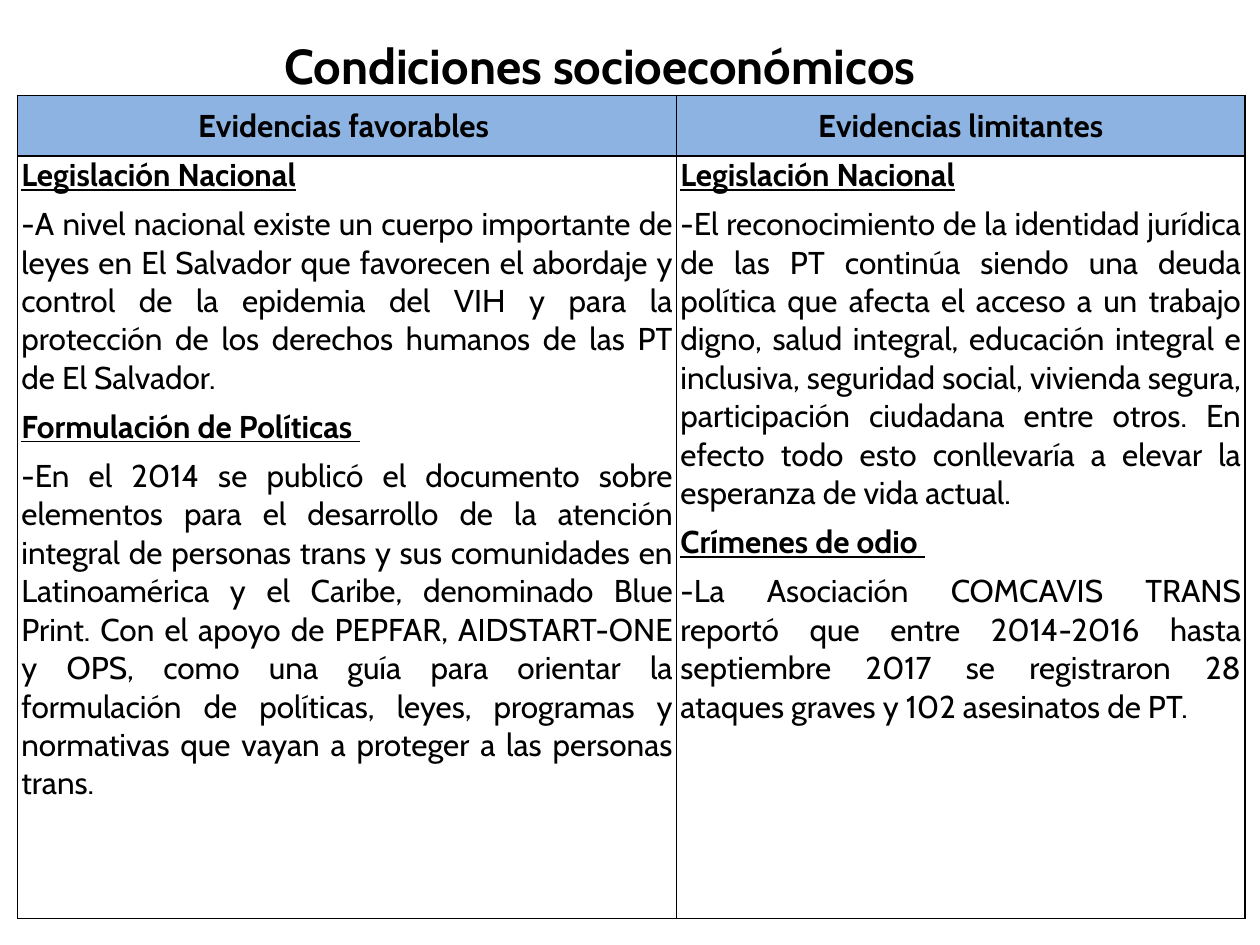
from lxml import etree
from pptx import Presentation
from pptx.dml.color import RGBColor
from pptx.enum.text import MSO_ANCHOR, PP_ALIGN
from pptx.oxml.ns import qn
from pptx.util import Inches, Pt

CENTER, LEFT, JUSTIFY = PP_ALIGN.CENTER, PP_ALIGN.LEFT, PP_ALIGN.JUSTIFY
TOP, MIDDLE = MSO_ANCHOR.TOP, MSO_ANCHOR.MIDDLE

TITLE = "Condiciones socioeconómicos "
COLUMNS = [
    {
        "heading": "Evidencias favorables ",
        "sections": [
            ("Legislación Nacional",
             "-A nivel nacional existe un cuerpo importante de leyes en El Salvador que "
             "favorecen el abordaje y control de la epidemia del VIH y para la protección "
             "de los derechos humanos de las PT de El Salvador. "),
            ("Formulación de Políticas ",
             "-En el 2014 se publicó el documento sobre elementos para el desarrollo de la "
             "atención integral de personas trans y sus comunidades en Latinoamérica y el "
             "Caribe, denominado Blue Print. Con el apoyo de PEPFAR, AIDSTART-ONE y OPS, "
             "como una guía para orientar la formulación de políticas, leyes, programas y "
             "normativas que vayan a proteger a las personas trans."),
        ],
    },
    {
        "heading": "Evidencias limitantes",
        "sections": [
            ("Legislación Nacional",
             "-El reconocimiento de la identidad jurídica de las PT continúa siendo una "
             "deuda política que afecta el acceso a un trabajo digno, salud integral, "
             "educación integral e inclusiva, seguridad social, vivienda segura, "
             "participación ciudadana entre otros. En efecto todo esto conllevaría a "
             "elevar la esperanza de vida actual. "),
            ("Crímenes de odio ",
             "-La Asociación COMCAVIS TRANS reportó que entre 2014-2016 hasta septiembre "
             "2017 se registraron 28 ataques graves y 102 asesinatos de PT."),
        ],
    },
]

THEME = {
    "font": "Cabin",
    "text": "000000",
    "header": "8DB3E2",
    "border": "000000",
    "title_size": 28,
    "table_size": 18,
    "border_width": 1,
    "paragraph_gap": 6,
}
SLIDE_SIZE = (10, 7.5)
TITLE_BOX = (0.12, 0.23, 9.37, 0.57)
TABLE_ORIGIN = (0.14, 0.76)
COLUMN_WIDTHS = (5.23, 4.51)
ROW_HEIGHTS = (0.48, 6.05)
CELL_INSET = 0.03


def write_paragraph(paragraph, text, size, bold=False, underline=False, align=LEFT, gap=0):
    paragraph.alignment = align
    paragraph.space_before = Pt(gap)
    run = paragraph.add_run()
    run.text = text
    font = run.font
    font.name = THEME["font"]
    font.size = Pt(size)
    font.bold = bold
    font.underline = underline
    font.color.rgb = RGBColor.from_string(THEME["text"])


def add_borders(cell):
    properties = cell._tc.get_or_add_tcPr()
    for index, side in enumerate(("lnL", "lnR", "lnT", "lnB")):
        line = etree.Element(qn(f"a:{side}"), w=str(Pt(THEME["border_width"])))
        fill = etree.SubElement(line, qn("a:solidFill"))
        etree.SubElement(fill, qn("a:srgbClr"), val=THEME["border"])
        properties.insert(index, line)


def format_cell(cell, anchor, fill=None):
    cell.margin_left = cell.margin_right = Inches(CELL_INSET)
    cell.margin_top = cell.margin_bottom = 0
    cell.vertical_anchor = anchor
    if fill:
        cell.fill.solid()
        cell.fill.fore_color.rgb = RGBColor.from_string(fill)
    else:
        cell.fill.background()
    add_borders(cell)


def write_sections(frame, sections):
    size, gap = THEME["table_size"], THEME["paragraph_gap"]
    for index, (heading, body) in enumerate(sections):
        paragraph = frame.add_paragraph() if index else frame.paragraphs[0]
        write_paragraph(paragraph, heading, size, bold=True, underline=True,
                        align=JUSTIFY if index else LEFT, gap=gap)
        write_paragraph(frame.add_paragraph(), body, size, align=JUSTIFY, gap=gap)


def add_evidence_table(slide):
    position = map(Inches, (*TABLE_ORIGIN, sum(COLUMN_WIDTHS), sum(ROW_HEIGHTS)))
    table = slide.shapes.add_table(len(ROW_HEIGHTS), len(COLUMNS), *position).table
    table.horz_banding = False
    for row, height in zip(table.rows, ROW_HEIGHTS):
        row.height = Inches(height)
    for index, (column, width) in enumerate(zip(COLUMNS, COLUMN_WIDTHS)):
        table.columns[index].width = Inches(width)
        header, body = table.cell(0, index), table.cell(1, index)
        format_cell(header, MIDDLE, THEME["header"])
        format_cell(body, TOP)
        write_paragraph(header.text_frame.paragraphs[0], column["heading"],
                        THEME["table_size"], bold=True, align=CENTER)
        write_sections(body.text_frame, column["sections"])


def add_title(slide):
    frame = slide.shapes.add_textbox(*map(Inches, TITLE_BOX)).text_frame
    frame.word_wrap = True
    write_paragraph(frame.paragraphs[0], TITLE, THEME["title_size"], bold=True, align=CENTER)


def main():
    presentation = Presentation()
    presentation.slide_width, presentation.slide_height = map(Inches, SLIDE_SIZE)
    slide = presentation.slides.add_slide(presentation.slide_layouts[6])
    add_evidence_table(slide)
    add_title(slide)
    presentation.save("out.pptx")


if __name__ == "__main__":
    main()
